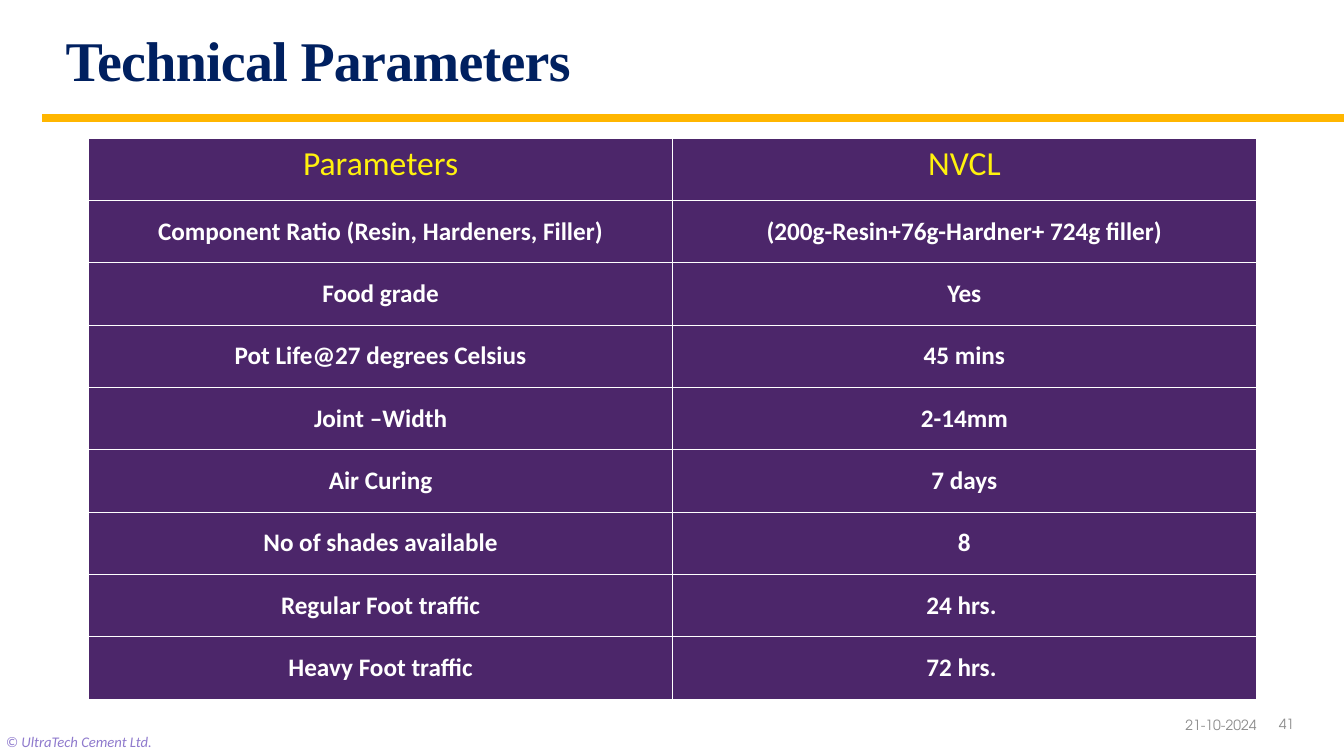
from dataclasses import dataclass

from lxml import etree
from pptx import Presentation
from pptx.dml.color import RGBColor
from pptx.enum import shapes, text
from pptx.oxml import ns
from pptx.util import Inches, Pt


@dataclass(frozen=True)
class Theme:
    navy: str = "002060"
    gold: str = "FFB600"
    purple: str = "4C266A"
    yellow: str = "FFF10D"
    white: str = "FFFFFF"
    grey: str = "8C8C8C"
    lilac: str = "8F7ACD"
    heading_font: str = "Times New Roman"
    body_font: str = "Calibri"
    meta_font: str = "TeX Gyre Adventor"
    title_size: float = 40
    header_size: float = 24
    cell_size: float = 18
    copyright_size: float = 10.5
    meta_size: float = 10


THEME = Theme()
CENTER = text.PP_ALIGN.CENTER
MIDDLE = text.MSO_ANCHOR.MIDDLE
ROWS = [
    ("Parameters", "NVCL"),
    ("Component Ratio (Resin, Hardeners, Filler)",
     "(200g-Resin+76g-Hardner+ 724g filler)"),
    ("Food grade", "Yes"),
    ("Pot Life@27 degrees Celsius", "45 mins"),
    ("Joint –Width", "2-14mm"),
    ("Air Curing", "7 days"),
    ("No of shades available", "8"),
    ("Regular Foot traffic", "24 hrs. "),
    ("Heavy Foot traffic", "72 hrs. "),
]


def rgb(color):
    return RGBColor.from_string(color)


def add_run(p, words, font, size, color, bold=False, italic=False):
    r = p.add_run()
    r.text = words
    r.font.name, r.font.size = font, Pt(size)
    r.font.color.rgb = rgb(color)
    r.font.bold, r.font.italic = bold, italic
    return r


def add_title(s, words, left, top, width, height):
    sp = s.shapes.title
    sp.left, sp.top, sp.width, sp.height = map(Inches, (left, top, width, height))
    tf = sp.text_frame
    tf.word_wrap = True
    tf.auto_size = text.MSO_AUTO_SIZE.NONE
    tf.vertical_anchor = text.MSO_ANCHOR.BOTTOM
    p = tf.paragraphs[0]
    p.alignment, p.line_spacing = CENTER, 0.85
    r = add_run(p, words, THEME.heading_font, THEME.title_size, THEME.navy, bold=True)
    r.font._element.set("spc", "-50")


def add_rule(s, left, top, width):
    line = s.shapes.add_connector(
        shapes.MSO_CONNECTOR.STRAIGHT,
        Inches(left), Inches(top), Inches(left + width), Inches(top))
    line.line.color.rgb = rgb(THEME.gold)
    line.line.width = Pt(6)
    etree.SubElement(line._element.spPr, ns.qn("a:effectLst"))


def add_label(s, left, top, width, height):
    """Add an empty one-line text box and return its text frame."""
    tf = s.shapes.add_textbox(*map(Inches, (left, top, width, height))).text_frame
    tf.word_wrap = True
    return tf


def add_footer(s, left, top, width):
    """Place the copyright line at the left, date and page number at the right."""
    tf = add_label(s, left + 0.06, top + 0.29, 4.54, 0.21)
    tf.margin_left = tf.margin_top = tf.margin_right = 0
    add_run(tf.paragraphs[0], "© UltraTech Cement Ltd.", THEME.body_font,
            THEME.copyright_size, THEME.lilac, italic=True)

    right = left + width
    for words, x, y, w, align in (
            ("21-10-2024", right - 1.95, top + 0.01, 1.18, text.PP_ALIGN.RIGHT),
            ("41", right - 0.8, top, 0.46, CENTER)):
        tf = add_label(s, x, y, w, 0.4)
        tf.vertical_anchor = MIDDLE
        p = tf.paragraphs[0]
        p.alignment = align
        add_run(p, words, THEME.meta_font, THEME.meta_size, THEME.grey)


def set_borders(cell):
    tc_pr = cell._tc.get_or_add_tcPr()
    for side in ("lnL", "lnR", "lnT", "lnB"):
        ln = etree.SubElement(tc_pr, ns.qn(f"a:{side}"), w=str(Pt(1)))
        fill = etree.SubElement(ln, ns.qn("a:solidFill"))
        etree.SubElement(fill, ns.qn("a:srgbClr"), val=THEME.white)


def fill_cell(cell, words, is_header):
    set_borders(cell)
    cell.fill.solid()
    cell.fill.fore_color.rgb = rgb(THEME.purple)
    cell.vertical_anchor = text.MSO_ANCHOR.TOP if is_header else MIDDLE
    p = cell.text_frame.paragraphs[0]
    p.alignment = CENTER
    size, color = ((THEME.header_size, THEME.yellow) if is_header
                   else (THEME.cell_size, THEME.white))
    add_run(p, words, THEME.body_font, size, color, bold=not is_header)


def add_parameter_table(s, rows, left, top, width, height):
    box = map(Inches, (left, top, width, height))
    table = s.shapes.add_table(len(rows), len(rows[0]), *box).table
    table.horz_banding = False
    for i, row in enumerate(rows):
        for j, words in enumerate(row):
            fill_cell(table.cell(i, j), words, is_header=i == 0)


def build_parameters_slide(prs):
    s = prs.slides.add_slide(prs.slide_layouts[5])
    add_footer(s, 0, 6.98, 13.33)
    add_rule(s, 0.42, 1.17, 12.91)
    add_title(s, "Technical Parameters", -0.58, 0.23, 7.47, 0.74)
    add_parameter_table(s, ROWS, 0.88, 1.37, 11.58, 5.57)


def main():
    prs = Presentation()
    prs.slide_width, prs.slide_height = Inches(13.33), Inches(7.5)
    build_parameters_slide(prs)
    prs.save("out.pptx")


if __name__ == "__main__":
    main()
